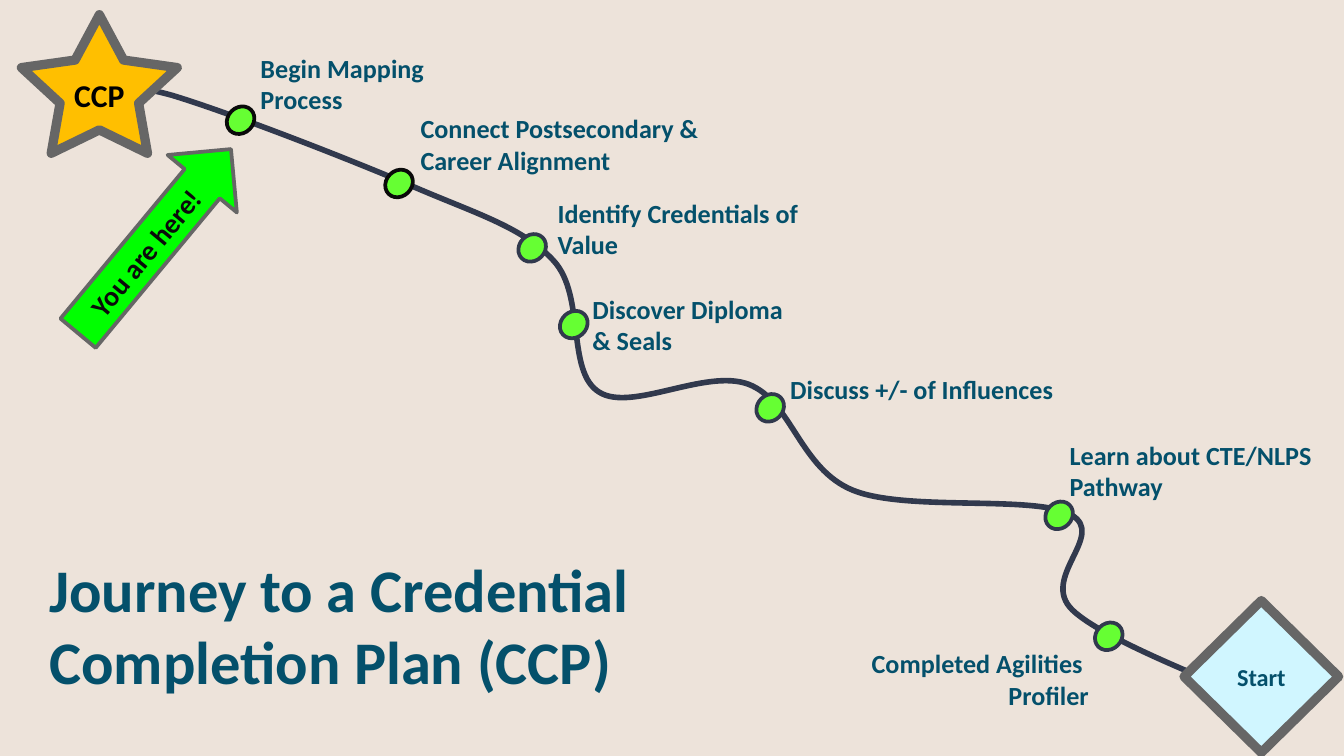
from lxml import etree
from pptx import Presentation
from pptx.dml.color import RGBColor
from pptx.enum import shapes, text
from pptx.util import Pt

SAND = RGBColor(0xED, 0xE3, 0xDA)
NAVY = RGBColor(0x31, 0x39, 0x4D)
TEAL = RGBColor(0x04, 0x50, 0x6B)
GRAY = RGBColor(0x66, 0x66, 0x66)
BLACK = RGBColor(0, 0, 0)
INK = RGBColor(0x0A, 0x0A, 0x0A)
LIME = RGBColor(0x66, 0xFF, 0x33)
GREEN = RGBColor(0, 0xFF, 0)
GOLD = RGBColor(0xFF, 0xBF, 0)
ICE = RGBColor(0xD0, 0xF6, 0xFF)

FONT = "Calibri"
INSET = 7.2
DOT_W, DOT_H = 15.8, 13.7
LEFT, CENTER, RIGHT = text.PP_ALIGN.LEFT, text.PP_ALIGN.CENTER, text.PP_ALIGN.RIGHT
MS = shapes.MSO_SHAPE

TITLE = "Journey to a Credential Completion Plan (CCP)"

# paragraphs, label box (left, top, width, height), alignment,
# dot centre, dot rotation, dot outline
STOPS = [
    (["Begin Mapping Process"], (132.5, 20.9, 136.8, 48.2), LEFT, (128.9, 64.4), 315, INK),
    (["Connect Postsecondary & Career Alignment"], (218.2, 53.3, 184.3, 48.2), LEFT,
     (213.8, 98.3), 315, INK),
    (["Identify Credentials of Value"], (291.6, 98.6, 149.8, 48.2), LEFT,
     (285.1, 132.8), 315, NAVY),
    (["Discover Diploma & Seals"], (310.3, 149.8, 126.7, 48.2), LEFT,
     (307.4, 173.9), 317.2, NAVY),
    (["Discuss +/- of Influences"], (416.2, 193, 188.6, 31.7), LEFT,
     (412.6, 218.5), 315, NAVY),
    (["Learn about CTE/NLPS Pathway"], (565.9, 228.2, 144.7, 48.2), LEFT,
     (567.4, 276.1), 315, NAVY),
    (["Completed Agilities ", "Profiler"], (445.7, 339.8, 144.7, 48.2), RIGHT,
     (594, 340.9), 315, NAVY),
]

# shape, text, box, fill, line width, font size, font colour, rotation, adjustments
MARKERS = [
    (MS.STAR_5_POINT, "CCP", (11.5, 7.9, 83.5, 74.2), GOLD, 5, 17, BLACK, 0,
     (0.252, 1.051, 1.106)),
    (MS.DIAMOND, "Start", (634.3, 321.8, 82.8, 81.4), ICE, 5, 13, TEAL, 0, ()),
    (MS.RIGHT_ARROW, "You are here! ", (18.7, 105.1, 128.2, 48.2), GREEN, 2, 15, INK, 309.7,
     (0.509, 0.5)),
]

# Start point, then two control points and an end point for each bend
ROAD = [
    (681.1, 378.7),
    (663.1, 370.1), (592.6, 344.2), (574.6, 326.9),
    (556.6, 309.6), (593.3, 286.6), (573.8, 275.8),
    (554.4, 265), (486, 274.3), (457.2, 262.8),
    (428.4, 251.3), (424.1, 214.6), (401, 205.9),
    (378, 197.3), (338.4, 221), (321.1, 210.2),
    (303.1, 199.4), (313.9, 158.4), (296.6, 139.7),
    (279.4, 121), (252.7, 113.8), (218.2, 98.6),
    (184.3, 84.2), (123.1, 60.5), (92.2, 51.1),
    (61.2, 42.5), (42.5, 46.1), (33.1, 45.4),
]


def write(sp, lines, size, color, align, anchor):
    tf = sp.text_frame
    tf.word_wrap = True
    tf.vertical_anchor = anchor
    tf.margin_left = tf.margin_right = tf.margin_top = tf.margin_bottom = Pt(INSET)
    for i, line in enumerate(lines):
        p = tf.add_paragraph() if i else tf.paragraphs[0]
        p.text = line
        p.alignment = align
        p.font.name, p.font.size, p.font.bold = FONT, Pt(size), True
        p.font.color.rgb = color


def add_label(s, lines, box, size, align, anchor):
    sp = s.shapes.add_textbox(*map(Pt, box))
    write(sp, lines, size, TEAL, align, anchor)


def add_filled(s, kind, box, fill, line, width, rotation):
    sp = s.shapes.add_shape(kind, *map(Pt, box))
    sp.shadow.inherit = False
    sp.fill.solid()
    sp.fill.fore_color.rgb = fill
    sp.line.color.rgb = line
    sp.line.width = Pt(width)
    sp.rotation = rotation
    return sp


def add_curve(s, points, color, width):
    """Draw a freeform whose points, three at a time, are cubic Bezier bends."""
    pts = [(Pt(x), Pt(y)) for x, y in points]
    builder = s.shapes.build_freeform(*pts[0])
    builder.add_line_segments(pts[1:], close=False)
    sp = builder.convert_to_shape()
    sp.shadow.inherit = False
    sp.fill.background()
    sp.line.color.rgb = color
    sp.line.width = Pt(width)
    ns = "{http://schemas.openxmlformats.org/drawingml/2006/main}"
    segments = list(sp._element.iter(ns + "lnTo"))
    outline = segments[0].getparent()
    for i in range(0, len(segments), 3):
        bend = etree.SubElement(outline, ns + "cubicBezTo")
        for segment in segments[i:i + 3]:
            bend.append(segment[0])
            outline.remove(segment)


def main():
    prs = Presentation()
    prs.slide_width, prs.slide_height = Pt(720), Pt(405)
    s = prs.slides.add_slide(prs.slide_layouts[6])
    s.background.fill.solid()
    s.background.fill.fore_color.rgb = SAND

    add_curve(s, ROAD, NAVY, 3)
    for lines, box, align, (x, y), rotation, outline in STOPS:
        add_label(s, lines, box, 14, align, text.MSO_ANCHOR.TOP)
        dot = (x - DOT_W / 2, y - DOT_H / 2, DOT_W, DOT_H)
        add_filled(s, MS.FLOWCHART_CONNECTOR, dot, LIME, outline, 2, rotation)
    add_label(s, [TITLE], (19.4, 285.8, 399.6, 97.2), 32.4, LEFT, text.MSO_ANCHOR.MIDDLE)
    for kind, words, box, fill, width, size, color, rotation, adjustments in MARKERS:
        sp = add_filled(s, kind, box, fill, GRAY, width, rotation)
        for i, value in enumerate(adjustments):
            sp.adjustments[i] = value
        write(sp, [words], size, color, CENTER, text.MSO_ANCHOR.MIDDLE)

    prs.save("out.pptx")


if __name__ == "__main__":
    main()
